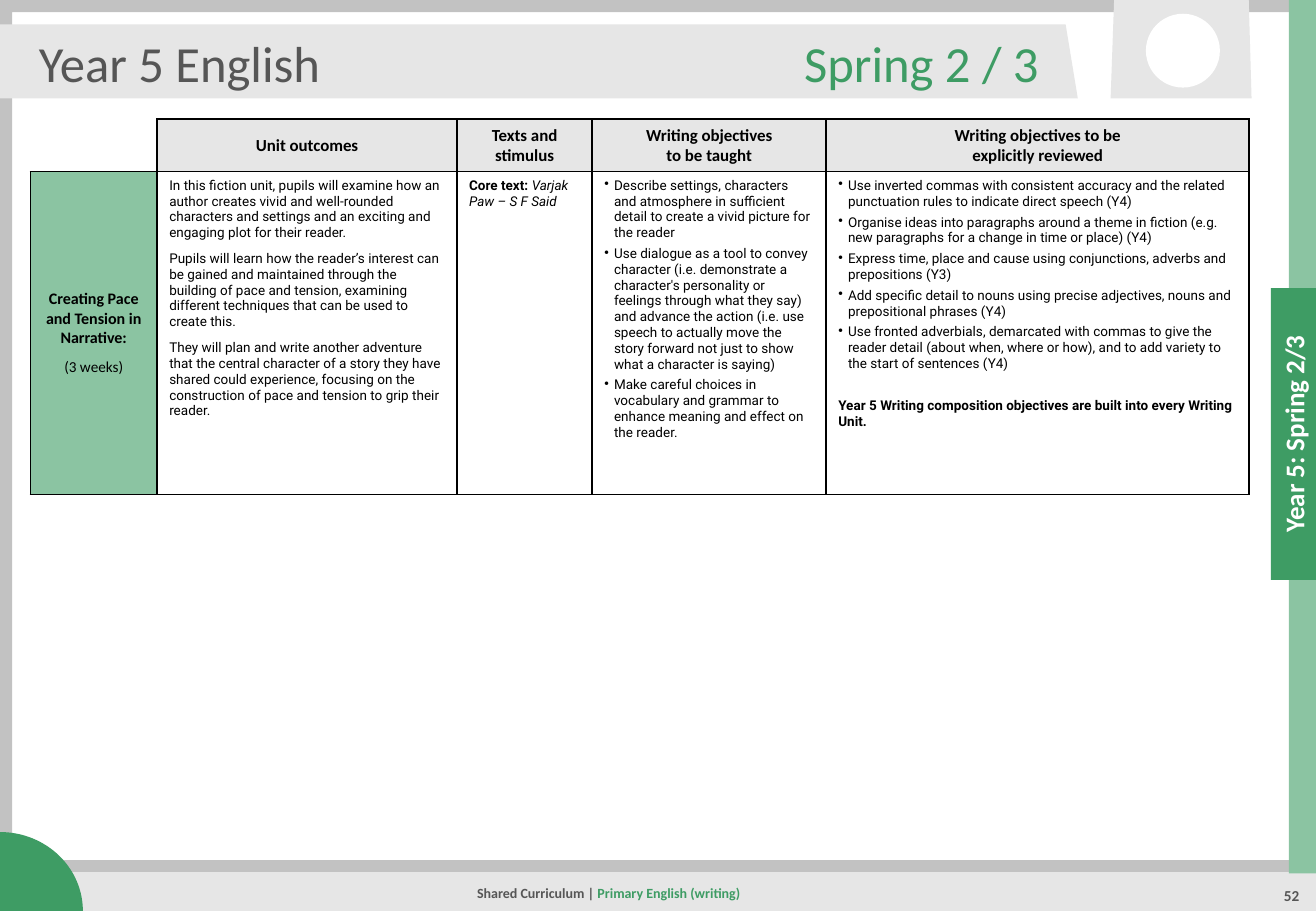
from dataclasses import dataclass
from math import cos, pi, sin

from lxml import etree
from pptx import Presentation
from pptx.dml.color import RGBColor
from pptx.enum.shapes import MSO_CONNECTOR, MSO_SHAPE
from pptx.enum.text import MSO_ANCHOR, PP_ALIGN
from pptx.oxml.ns import qn
from pptx.util import Emu, Inches, Pt

RECTANGLE, OVAL, FRAME = MSO_SHAPE.RECTANGLE, MSO_SHAPE.OVAL, MSO_SHAPE.FRAME
STRAIGHT = MSO_CONNECTOR.STRAIGHT
LEFT, CENTER, RIGHT = PP_ALIGN.LEFT, PP_ALIGN.CENTER, PP_ALIGN.RIGHT
TOP, MIDDLE = MSO_ANCHOR.TOP, MSO_ANCHOR.MIDDLE

BLACK = RGBColor(0x00, 0x00, 0x00)
WHITE = RGBColor(0xFF, 0xFF, 0xFF)
GREY = RGBColor(0xC2, 0xC2, 0xC2)
PALE_GREY = RGBColor(0xE6, 0xE6, 0xE6)
DARK_GREY = RGBColor(0x56, 0x56, 0x56)
GREEN = RGBColor(0x3E, 0x9C, 0x64)
PALE_GREEN = RGBColor(0x8B, 0xC4, 0xA2)

TITLE = {"name": "Calibri", "size": Pt(30), "color": DARK_GREY}
TAB = {"name": "Calibri", "size": Pt(16), "color": WHITE, "bold": True}
FOOTER = {"name": "Calibri", "size": Pt(8.3), "color": DARK_GREY, "bold": True}
HEADING = {"name": "Calibri", "size": Pt(10), "color": BLACK, "bold": True}
UNIT = {**HEADING, "size": Pt(9.5)}
BODY = {"name": "Roboto", "size": Pt(8), "color": BLACK}

HEADINGS = ["Unit outcomes", "Texts and stimulus", "Writing objectives\nto be taught",
            "Writing objectives to be\nexplicitly reviewed"]
OUTCOMES = [
    "In this fiction unit, pupils will examine how an author creates vivid and well-rounded characters and settings and an exciting and engaging plot for their reader.",
    "Pupils will learn how the reader’s interest can be gained and maintained through the building of pace and tension, examining different techniques that can be used to create this.",
    "They will plan and write another adventure that the central character of a story they have shared could experience, focusing on the construction of pace and tension to grip their reader.",
]
TAUGHT = [
    "Describe settings, characters and atmosphere in sufficient detail to create a vivid picture for the reader",
    "Use dialogue as a tool to convey character (i.e. demonstrate a character's personality or feelings through what they say) and advance the action (i.e. use speech to actually move the story forward not just to show what a character is saying)",
    "Make careful choices in vocabulary and grammar to enhance meaning and effect on the reader.",
]
REVIEWED = [
    "Use inverted commas with consistent accuracy and the related punctuation rules to indicate direct speech (Y4)",
    "Organise ideas into paragraphs around a theme in fiction (e.g. new paragraphs for a change in time or place) (Y4)",
    "Express time, place and cause using conjunctions, adverbs and prepositions (Y3)",
    "Add specific detail to nouns using precise adjectives, nouns and prepositional phrases (Y4)",
    "Use fronted adverbials, demarcated with commas to give the reader detail (about when, where or how), and to add variety to the start of sentences (Y4)",
]
REMINDER = "Year 5 Writing composition objectives are built into every Writing Unit."


@dataclass
class Box:
    """A region in inches; places inside it are given in percent."""
    left: float
    top: float
    width: float
    height: float

    def point(self, x, y):
        return (Inches(self.left + self.width * x / 100),
                Inches(self.top + self.height * y / 100))

    def area(self, x, y, width, height):
        return (*self.point(x, y), Inches(self.width * width / 100),
                Inches(self.height * height / 100))


def paint(shape, color):
    shape.shadow.inherit = False
    shape.fill.solid()
    shape.fill.fore_color.rgb = color
    shape.line.fill.background()
    return shape


def add_preset(page, kind, place, color):
    return paint(page.shapes.add_shape(kind, *place), color)


def add_outline(page, points, color):
    builder = page.shapes.build_freeform(*points[0])
    builder.add_line_segments(points[1:], close=True)
    return paint(builder.convert_to_shape(), color)


def write(para, spans, align=LEFT, after=0, before=0, bullet=False):
    if bullet:
        properties = para._p.get_or_add_pPr()
        properties.set("marL", str(Inches(0.08)))
        properties.set("indent", str(-Inches(0.08)))
        etree.SubElement(properties, qn("a:buChar"), char="•")
    spacing = {"alignment": align, "space_after": Pt(after), "space_before": Pt(before)}
    for name, value in spacing.items():
        setattr(para, name, value)
    for text, style in spans:
        for number, line in enumerate(text.split("\n")):
            if number:
                para.add_line_break()
            span = para.add_run()
            span.text = line
            for name, value in style.items():
                if name == "color":
                    span.font.color.rgb = value
                else:
                    setattr(span.font, name, value)


def add_label(page, place, spans, align, rotation=0):
    label = page.shapes.add_textbox(*place)
    label.rotation = rotation
    frame = label.text_frame
    frame.word_wrap = True
    frame.vertical_anchor = MIDDLE
    frame.margin_top = frame.margin_bottom = 0
    if align == CENTER:
        frame.margin_left = frame.margin_right = 0
    write(frame.paragraphs[0], spans, align)


def draw_frame(page, box):
    border = add_preset(page, FRAME, box.area(0, 0, 100, 100), GREY)
    border.adjustments[0] = 0.1 / box.height


def draw_footer(page, box):
    add_preset(page, RECTANGLE, box.area(3, 50, 97, 50), PALE_GREY)
    rule = page.shapes.add_connector(STRAIGHT, *box.point(0.5, 43), *box.point(100, 43))
    rule.line.color.rgb = GREY
    rule.line.width = Pt(7)
    etree.SubElement(rule._element.spPr, qn("a:effectLst"))
    # Quarter disc in the corner
    angles = [pi / 2 * step / 40 for step in range(41)]
    curve = [box.point(6.3 * cos(angle), 100 - 100 * sin(angle)) for angle in angles]
    add_outline(page, [box.point(0, 100), *curve], GREEN)
    add_label(page, box.area(19, 55, 54.5, 45), [
        ("Shared Curriculum | ", FOOTER),
        ("Primary English (writing)", {**FOOTER, "color": GREEN})], CENTER)
    add_label(page, box.area(96.3, 60, 3.7, 40), [("52", {**FOOTER, "size": Pt(9)})], CENTER)


def draw_header(page, box):
    corners = [(0, 0), (98.87, 0), (100, 100), (0, 100)]
    add_outline(page, [box.point(*corner) for corner in corners], PALE_GREY)
    add_label(page, box.area(2.5, 10, 47.5, 82), [("Year 5 English", TITLE)], LEFT)
    add_label(page, box.area(50, 10, 47.5, 82),
              [("Spring 2 / 3", {**TITLE, "color": GREEN})], RIGHT)


def draw_badge(page, box):
    corners = [(2.5, 0), (98, 0), (100, 100), (0, 100)]
    add_outline(page, [box.point(*corner) for corner in corners], PALE_GREY)
    add_preset(page, OVAL, box.area(25, 14, 52.5, 75), WHITE)


def draw_side_tab(page, box):
    add_preset(page, RECTANGLE, box.area(40, 0, 60, 100), PALE_GREEN)
    left, top, width, height = place = box.area(0, 33, 100, 33.4)
    add_preset(page, RECTANGLE, place, GREEN)
    # The label lies flat about the tab's centre, then turns upright
    shift = Emu((height - width) // 2)
    add_label(page, (left - shift, top + shift, height, width),
              [("Year 5: Spring 2/3", TAB)], CENTER, rotation=270)


def fill_cell(cell, color, paragraphs, sides="LRTB", anchor=TOP, margin=0.1):
    properties = cell._tc.get_or_add_tcPr()
    for side in sides:
        border = etree.SubElement(properties, qn(f"a:ln{side}"), w=str(Pt(1)))
        solid = etree.SubElement(border, qn("a:solidFill"))
        etree.SubElement(solid, qn("a:srgbClr"), val=str(BLACK))
    cell.fill.solid()
    cell.fill.fore_color.rgb = color
    cell.vertical_anchor = anchor
    cell.margin_left = cell.margin_right = Inches(margin)
    for number, (spans, layout) in enumerate(paragraphs):
        frame = cell.text_frame
        write(frame.add_paragraph() if number else frame.paragraphs[0], spans, **layout)


def draw_unit_table(page, box):
    table = page.shapes.add_table(2, 5, *box.area(0, 0, 100, 100)).table
    table.first_row = table.horz_banding = False
    for column, share in zip(table.columns, [10.4, 24.6, 11.1, 19.2, 34.7]):
        column.width = Inches(box.width * share / 100)
    for row, share in zip(table.rows, [14, 86]):
        row.height = Inches(box.height * share / 100)

    # Heading row
    fill_cell(table.cell(0, 0), WHITE, [], sides="RB")
    for column, heading in enumerate(HEADINGS, start=1):
        fill_cell(table.cell(0, column), PALE_GREY,
                  [([(heading, HEADING)], {"align": CENTER, "after": 3})],
                  anchor=MIDDLE, margin=0.04)

    # Unit row
    name_layout = {"align": CENTER, "after": 6}
    fill_cell(table.cell(1, 0), PALE_GREEN, [
        ([("Creating Pace and Tension in Narrative:", UNIT)], name_layout),
        ([("(3 weeks)", {**UNIT, "size": Pt(9), "bold": False})], name_layout),
    ], anchor=MIDDLE, margin=0.08)
    bullets = {"after": 3, "bullet": True}
    bold = {**BODY, "bold": True}
    contents = [
        [([(text, BODY)], {"after": 6}) for text in OUTCOMES],
        [([("Core text: ", bold), ("Varjak Paw – S F Said", {**BODY, "italic": True})],
          {"after": 3})],
        [([(text, BODY)], bullets) for text in TAUGHT],
        [([(text, BODY)], bullets) for text in REVIEWED]
        + [([(REMINDER, bold)], {"after": 3, "before": 12.5})],
    ]
    for column, paragraphs in enumerate(contents, start=1):
        fill_cell(table.cell(1, column), WHITE, paragraphs)


def main():
    deck = Presentation()
    deck.slide_width, deck.slide_height = Inches(10.83), Inches(7.5)
    page = deck.slides.add_slide(deck.slide_layouts[6])
    draw_frame(page, Box(0, 0, 10.83, 7.5))
    draw_footer(page, Box(0, 6.85, 10.83, 0.65))
    draw_header(page, Box(0, 0.2, 8.87, 0.61))
    draw_side_tab(page, Box(10.46, 0, 0.37, 7.19))
    draw_badge(page, Box(9.14, 0, 1.16, 0.81))
    draw_unit_table(page, Box(0.25, 0.98, 10.03, 3.09))
    deck.save("out.pptx")


if __name__ == "__main__":
    main()
